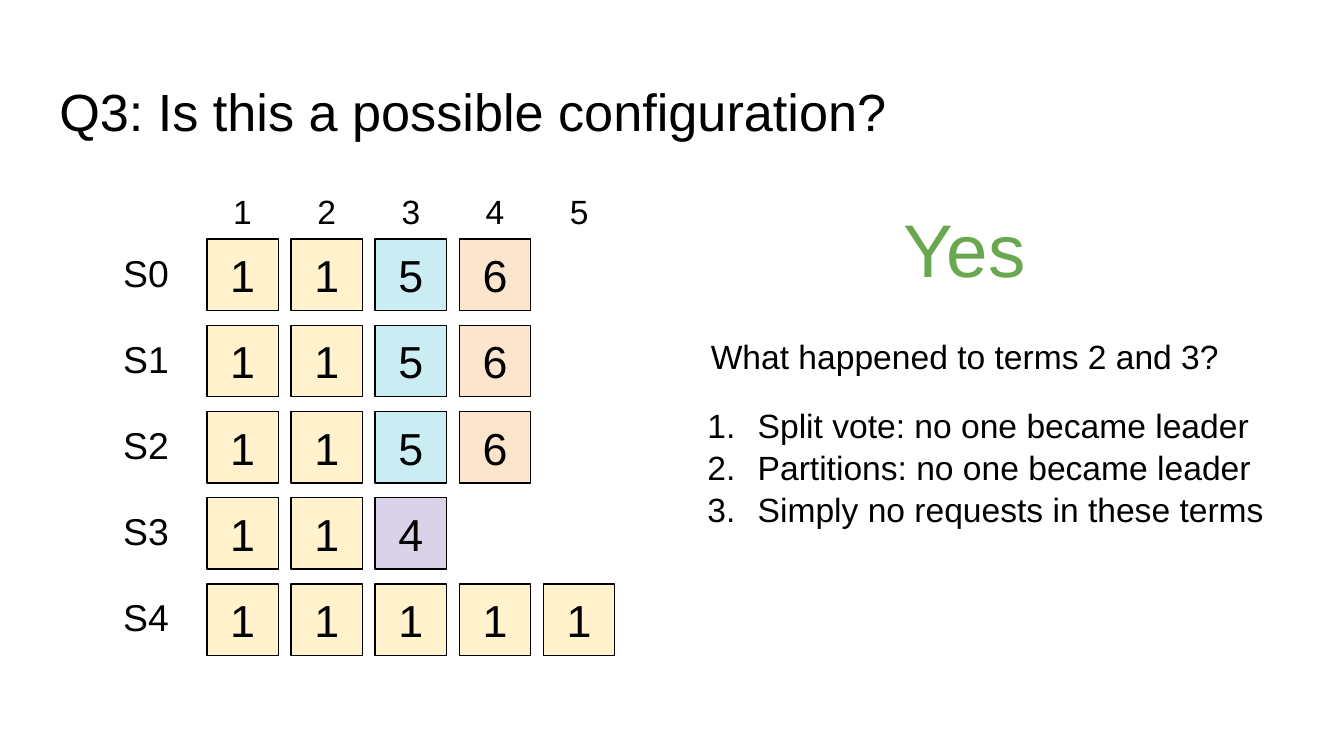
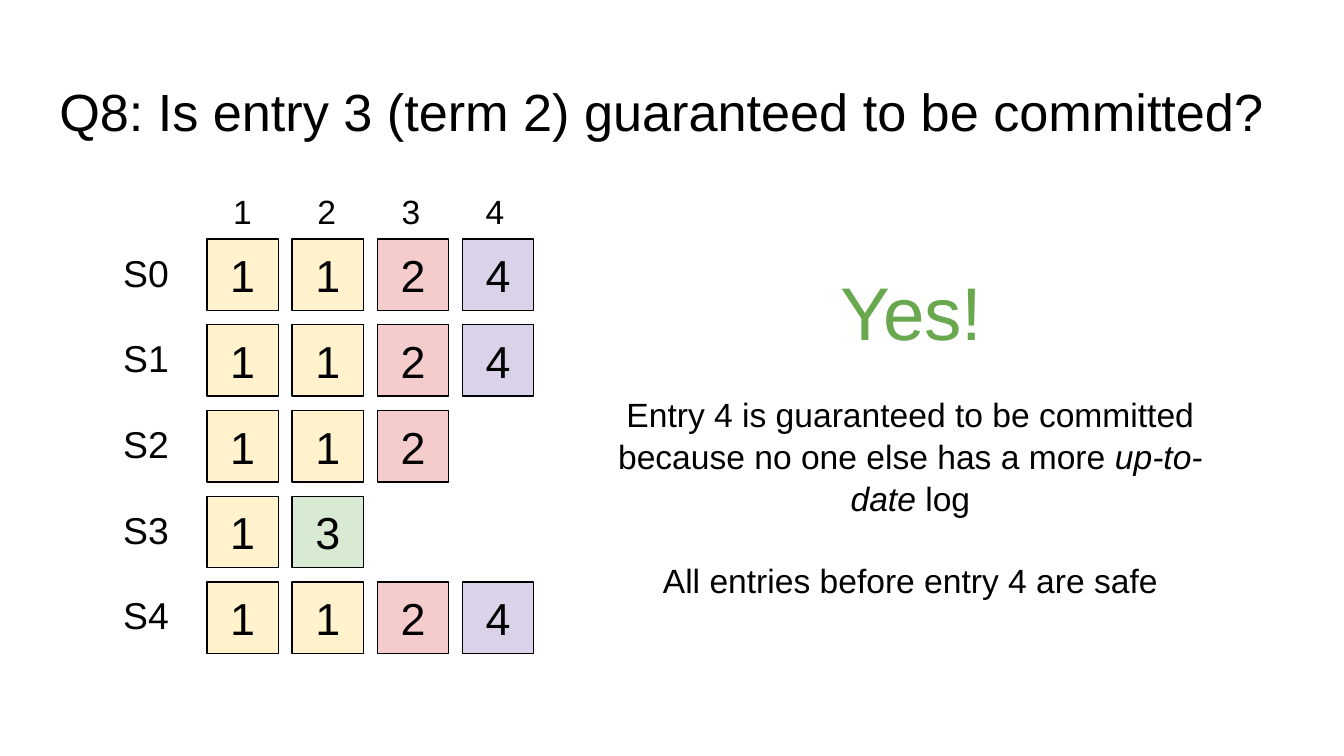
from dataclasses import dataclass, field
from lxml.etree import SubElement as Sub
from pptx import Presentation
from pptx.dml.color import RGBColor as Rgb
from pptx.enum.shapes import MSO_SHAPE as Kind
from pptx.enum.text import MSO_ANCHOR as Anchor, MSO_AUTO_SIZE as Auto, PP_ALIGN as Align
from pptx.oxml.ns import qn
from pptx.util import Cm, Pt


@dataclass(frozen=True)
class Theme:
    font: str = "Arial"
    ink: str = "000000"
    yes: str = "6AA84F"
    title: int = 28
    cell: int = 24
    name: int = 20
    text: int = 18
    big: int = 40
    lead: float = 1.04
    terms: dict = field(default_factory=lambda: {
        1: "FFF2CC", 2: "F4CCCC", 3: "D9EAD3",
        4: "D9D2E9", 5: "CAEDF3", 6: "FCE5CD"})


LOOK = Theme()
LEFT, TOP, SIDE, STEP = 3.91, 4.52, 1.35, 1.59


def place(shape, box):
    shape.left, shape.top, shape.width, shape.height = map(Cm, box)


def setup(shape, anchor=Anchor.TOP):
    frame = shape.text_frame
    frame.auto_size = Auto.NONE
    frame.word_wrap = True
    frame.vertical_anchor = anchor
    frame.margin_left = frame.margin_right = Cm(0.25)
    frame.margin_top = frame.margin_bottom = Cm(0.25)
    return frame


def write(par, text, size, color=LOOK.ink, slant=False):
    run = par.add_run()
    run.text = text
    font = run.font
    font.name, font.size, font.italic = LOOK.font, Pt(size), slant
    font.color.rgb = Rgb.from_string(color)


def label(slide, box, text, size, color=LOOK.ink, align=Align.CENTER, anchor=Anchor.TOP):
    par = setup(slide.shapes.add_textbox(*map(Cm, box)), anchor).paragraphs[0]
    par.alignment = align
    write(par, text, size, color)


def cell(slide, x, y, term):
    shape = slide.shapes.add_shape(Kind.RECTANGLE, *map(Cm, (x, y, SIDE, SIDE)))
    shape.shadow.inherit = False
    shape.fill.solid()
    shape.fill.fore_color.rgb = Rgb.from_string(LOOK.terms[term])
    shape.line.color.rgb = Rgb.from_string(LOOK.ink)
    shape.line.width = Pt(0.75)
    par = setup(shape, Anchor.MIDDLE).paragraphs[0]
    par.alignment = Align.CENTER
    write(par, str(term), LOOK.cell)


def grid(slide, logs, across, down):
    for col in range(max(map(len, logs))):
        label(slide, (LEFT + col * STEP, 3.51, SIDE, 0.97), str(col + 1), LOOK.text,
              anchor=Anchor.MIDDLE)
    for row, log in enumerate(logs):
        y = TOP + row * down
        label(slide, (2.08, y - 0.05, 1.55, SIDE), f"S{row}", LOOK.name, align=Align.LEFT)
        for col, term in enumerate(log):
            cell(slide, LEFT + col * across, y, term)


def mark(par, count):
    props = par._p.get_or_add_pPr()
    props.set("marL", str(Cm(1.27) if count else 0))
    props.set("indent", str(Cm(-0.95) if count else 0))
    if count:
        tint = Sub(props, qn("a:buClr"))
        Sub(tint, qn("a:srgbClr"), val=LOOK.ink)
        Sub(props, qn("a:buFont"), typeface=LOOK.font)
        Sub(props, qn("a:buAutoNum"), type="arabicPeriod")
    else:
        Sub(props, qn("a:buNone"))


def body(slide, box, lines, count=False, gap=0):
    shape = slide.placeholders[1]
    place(shape, box)
    frame = setup(shape)
    for num, parts in enumerate(lines):
        par = frame.add_paragraph() if num else frame.paragraphs[0]
        par.alignment = Align.LEFT if count else Align.CENTER
        par.line_spacing = LOOK.lead
        par.space_before = Pt(gap if num else 0)
        mark(par, count)
        for text, slant in parts:
            write(par, text, LOOK.text, slant=slant)


def start(deck, title):
    slide = deck.slides.add_slide(deck.slide_layouts[1])
    shape = slide.shapes.title
    place(shape, (0.87, 1.24, 23.67, 1.6))
    par = setup(shape).paragraphs[0]
    par.alignment = Align.LEFT
    write(par, title, LOOK.title)
    return slide


def main():
    deck = Presentation()
    deck.slide_width, deck.slide_height = Cm(25.4), Cm(14.29)

    slide = start(deck, "Q3: Is this a possible configuration?")
    grid(slide, [[1, 1, 5, 6]] * 3 + [[1, 1, 4], [1] * 5], STEP, 1.63)
    label(slide, (12.8, 6.1, 10.87, 1.35), "What happened to terms 2 and 3?", LOOK.text)
    label(slide, (12.8, 3.58, 10.87, 2.11), "Yes", LOOK.big, LOOK.yes)
    body(slide, (12.8, 7.37, 11.71, 2.79), [
        [("Split vote: no one became leader", False)],
        [("Partitions: no one became leader", False)],
        [("Simply no requests in these terms", False)]], count=True)

    slide = start(deck, "Q8: Is entry 3 (term 2) guaranteed to be committed?")
    full = [1, 1, 2, 4]
    grid(slide, [full, full, full[:3], [1, 3], full], 1.61, 1.62)
    label(slide, (11.79, 4.78, 10.87, 2.11), "Yes!", LOOK.big, LOOK.yes)
    body(slide, (10.97, 7.16, 12.47, 4.37), [
        [("Entry 4 is guaranteed to be committed because no one else has a more ", False),
         ("up-to-date", True), (" log", False)],
        [("All entries before entry 4 are safe", False)]], gap=21.5)

    deck.save("out.pptx")


if __name__ == "__main__":
    main()
